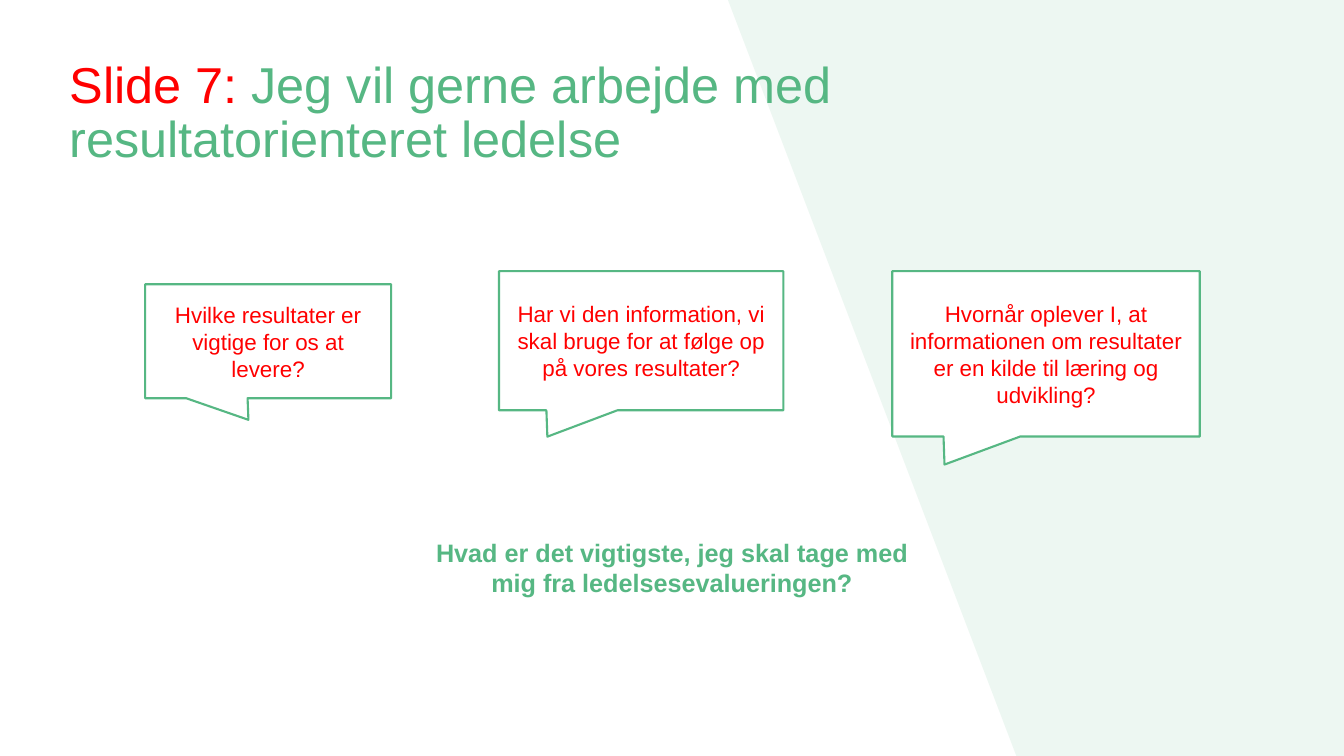
from lxml.etree import SubElement
from pptx import Presentation
from pptx.dml.color import RGBColor
from pptx.enum.shapes import MSO_SHAPE
from pptx.enum.text import MSO_ANCHOR, PP_ALIGN
from pptx.oxml.ns import qn
from pptx.util import Inches, Pt

GREEN, RED, WHITE = "56B783", "FF0000", "FFFFFF"

deck = Presentation()
deck.slide_width, deck.slide_height = Inches(13.33), Inches(7.5)
slide = deck.slides.add_slide(deck.slide_layouts[5])
shapes = slide.shapes


def share(*marks):
    """Turn alternating x and y percentages of the slide into lengths."""
    sides = (deck.slide_width, deck.slide_height)
    return [int(sides[i % 2] * mark / 100) for i, mark in enumerate(marks)]


def style(run, size, color, bold=False):
    run.font.name, run.font.size, run.font.bold = "Arial", Pt(size), bold
    run.font.color.rgb = RGBColor.from_string(color)


# Pale slanted band on the right
corners = [share(*spot) for spot in ((54.16, 0), (75.62, 100), (100, 100), (100, 0))]
pen = shapes.build_freeform(*corners[0], scale=1.0)
pen.add_line_segments(corners[1:], close=True)
band = pen.convert_to_shape()
band.shadow.inherit = False
band.fill.solid()
band.fill.fore_color.rgb = RGBColor.from_string(GREEN)
band.line.fill.background()
tint = band.fill._xPr.find(qn("a:solidFill"))[0]
SubElement(tint, qn("a:alpha")).set("val", "10000")

# Title, brought in front of the band
title = shapes.title
title.left, title.top, title.width, title.height = share(4.43, 7.73, 65.57, 14.8)
band.element.addnext(title.element)
frame = title.text_frame
frame.word_wrap = True
frame.vertical_anchor = MSO_ANCHOR.MIDDLE
line = frame.paragraphs[0]
line.alignment, line.line_spacing = PP_ALIGN.LEFT, 0.9
for words, color in (("Slide 7:", RED),
                     (" Jeg vil gerne arbejde med resultatorienteret ledelse", GREEN)):
    run = line.add_run()
    run.text = words
    style(run, 36, color)

# Questions in speech bubbles: place, tail tip, words
bubbles = [
    ((10.8, 37.6, 18.3, 15.07), (-0.08, 0.69),
     "Hvilke resultater er vigtige for os at levere?"),
    ((37.13, 35.87, 21.15, 18.4), (-0.33, 0.69),
     "Har vi den information, vi skal bruge for at følge op på vores resultater?"),
    ((66.39, 35.87, 22.88, 21.87), (-0.33, 0.67),
     "Hvornår oplever I, at informationen om resultater er en kilde til læring og udvikling?"),
]
notes = []
for place, tip, words in bubbles:
    bubble = shapes.add_shape(MSO_SHAPE.RECTANGULAR_CALLOUT, *share(*place))
    bubble.adjustments[0], bubble.adjustments[1] = tip
    bubble.shadow.inherit = False
    bubble.fill.solid()
    bubble.fill.fore_color.rgb = RGBColor.from_string(WHITE)
    bubble.line.color.rgb = RGBColor.from_string(GREEN)
    bubble.line.width = Pt(1.5)
    notes.append((bubble, words, 16, RED, False))

# Closing question
close = shapes.add_textbox(*share(31.51, 70.53, 36.98, 9.07))
notes.append((close, "Hvad er det vigtigste, jeg skal tage med mig fra ledelsesevalueringen?",
              18, GREEN, True))

# Centred text for the bubbles and the closing question
for shape, words, size, color, bold in notes:
    frame = shape.text_frame
    frame.word_wrap = True
    frame.vertical_anchor = MSO_ANCHOR.MIDDLE
    frame.text = words
    line = frame.paragraphs[0]
    line.alignment, line.line_spacing = PP_ALIGN.CENTER, 1.0
    style(line.runs[0], size, color, bold)

deck.save("out.pptx")
